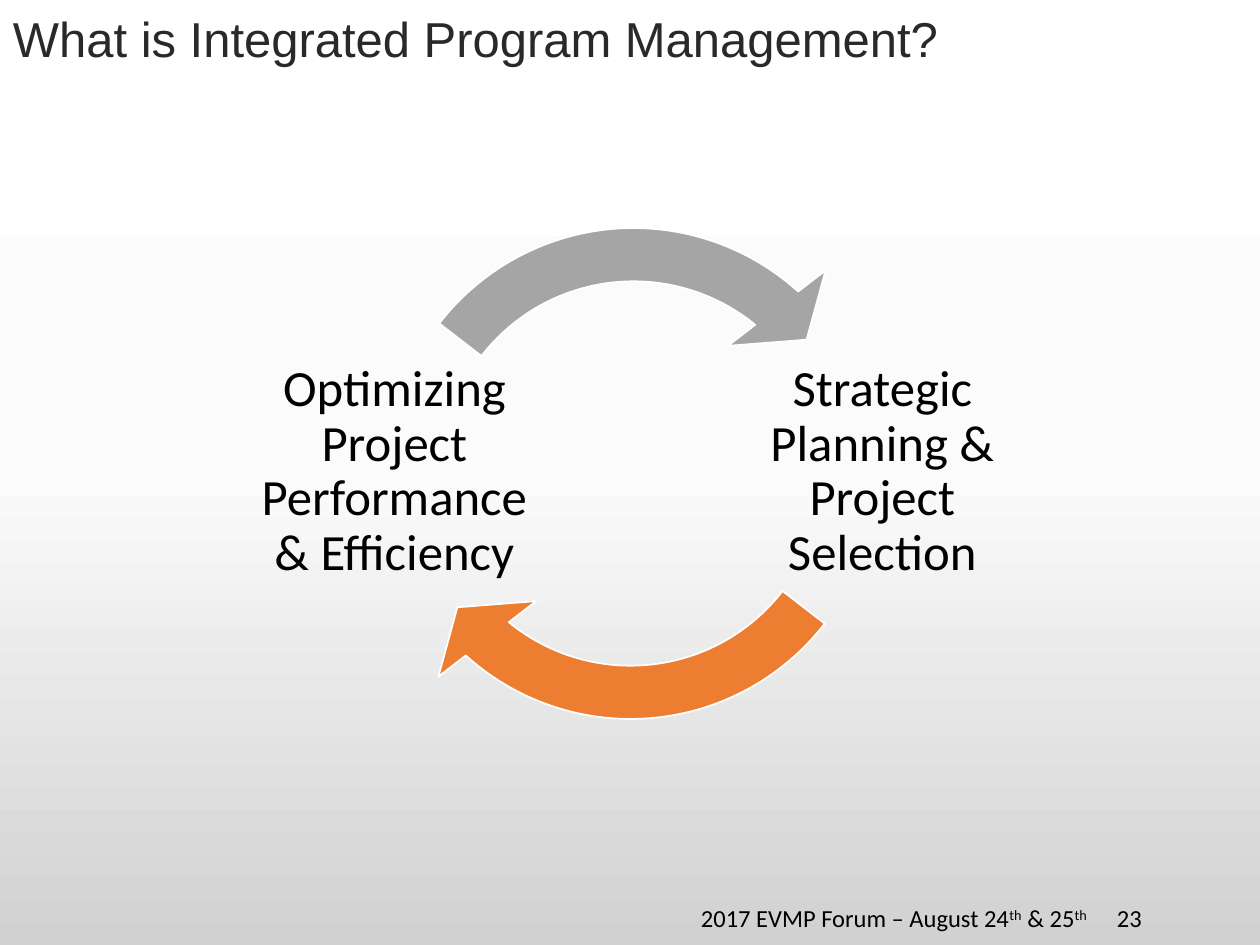
from copy import deepcopy

from pptx import Presentation
from pptx.dml.color import RGBColor
from pptx.enum.shapes import MSO_SHAPE
from pptx.enum.text import MSO_ANCHOR, PP_ALIGN
from pptx.oxml.ns import qn
from pptx.util import Emu, Pt

PX_PER_INCH = 126
CIRCULAR_ARROW = MSO_SHAPE.CIRCULAR_ARROW
TOP, MIDDLE = MSO_ANCHOR.TOP, MSO_ANCHOR.MIDDLE
LEFT, CENTER = PP_ALIGN.LEFT, PP_ALIGN.CENTER


def px(length):
    return Emu(round(length * 914400 / PX_PER_INCH))


def color(hex_string):
    return RGBColor.from_string(hex_string)


class SlideBuilder:
    font = "Calibri"
    ink = "000000"
    outline = "FFFFFF"

    def __init__(self, deck):
        self.slide = deck.slides.add_slide(deck.slide_layouts[6])

    def background(self, stops):
        """Fill the page from top to bottom with (position, colour) stops."""
        fill = self.slide.background.fill
        fill.gradient()
        fill.gradient_angle = 270
        stop_list = self.slide.element.find(".//" + qn("a:gsLst"))
        while len(stop_list) < len(stops):
            stop_list.append(deepcopy(stop_list[0]))
        for stop, (position, shade) in zip(fill.gradient_stops, stops):
            stop.position = position
            stop.color.rgb = color(shade)

    def text(self, area, runs, size, font=None, ink=None, align=LEFT,
             anchor=TOP, spacing=1.0, insets=(13, 6)):
        """Add one paragraph; runs are (text, is_superscript) pairs."""
        box = self.slide.shapes.add_textbox(*map(px, area))
        frame = box.text_frame
        frame.word_wrap = True
        frame.vertical_anchor = anchor
        frame.margin_left = frame.margin_right = px(insets[0])
        frame.margin_top = frame.margin_bottom = px(insets[1])
        para = frame.paragraphs[0]
        para.alignment = align
        para.line_spacing = spacing
        for content, superscript in runs:
            span = para.add_run()
            span.text = content
            span.font.name = font or self.font
            span.font.size = Pt(size)
            span.font.color.rgb = color(ink or self.ink)
            if superscript:
                span.font._element.set("baseline", "30000")

    def stage(self, area, label):
        self.text(area, [(label, False)], 29, align=CENTER, anchor=MIDDLE,
                  spacing=0.9, insets=(5, 5))

    def cycle_arrow(self, left, top, size, end_angle, start_angle, fill):
        """Add a curved arrow; angles are in degrees, clockwise from the right."""
        arrow = self.slide.shapes.add_shape(
            CIRCULAR_ARROW, px(left), px(top), px(size), px(size))
        arrow.shadow.inherit = False
        arrow.fill.solid()
        arrow.fill.fore_color.rgb = color(fill)
        arrow.line.color.rgb = color(self.outline)
        arrow.line.width = Pt(1)
        # Angle adjustments count 0.6 per degree.
        values = (0.095, 11.4 * 0.6, end_angle * 0.6, start_angle * 0.6, 0.11)
        for index, value in enumerate(values):
            arrow.adjustments[index] = value


def main():
    deck = Presentation()
    deck.slide_width, deck.slide_height = px(1260), px(945)
    page = SlideBuilder(deck)
    page.background([(0, "FFFFFF"), (0.5, "FBFBFB"), (1, "D1D1D1")])

    page.stage((737, 336, 291, 272), "Strategic Planning & Project Selection")
    page.cycle_arrow(350, 193, 561, 130.9, 37.7, "ED7D31")
    page.stage((252, 336, 285, 272), "Optimizing Project Performance & Efficiency")
    page.cycle_arrow(353, 193, 561, 310.9, 217.7, "A5A5A5")

    page.text((0, 9, 1036, 81), [("What is Integrated Program Management?", False)],
              28, font="Arial", ink="292929", spacing=0.9)
    page.text((688, 897, 415, 50),
              [("2017 EVMP Forum – August 24", False), ("th", True),
               (" & 25", False), ("th", True)], 14)
    page.text((1104, 897, 91, 50), [("23", False)], 14)
    deck.save("out.pptx")


if __name__ == "__main__":
    main()
